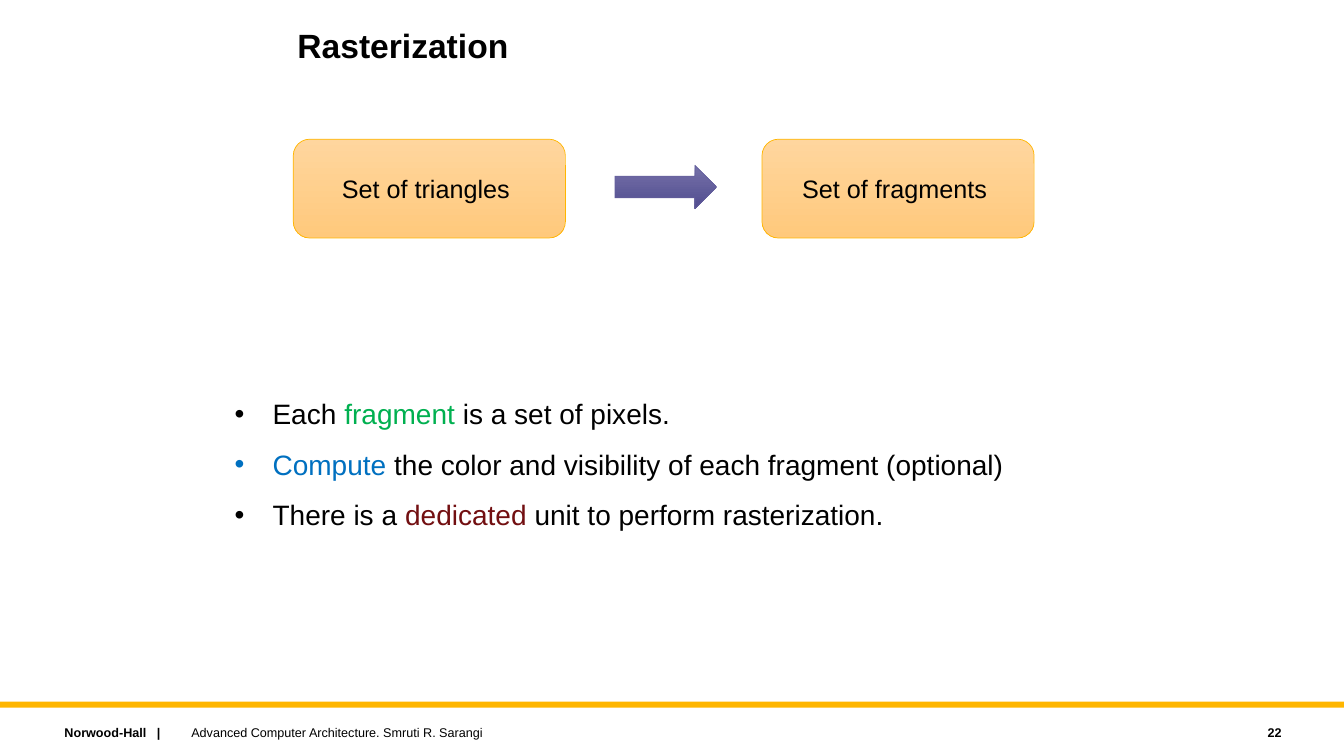
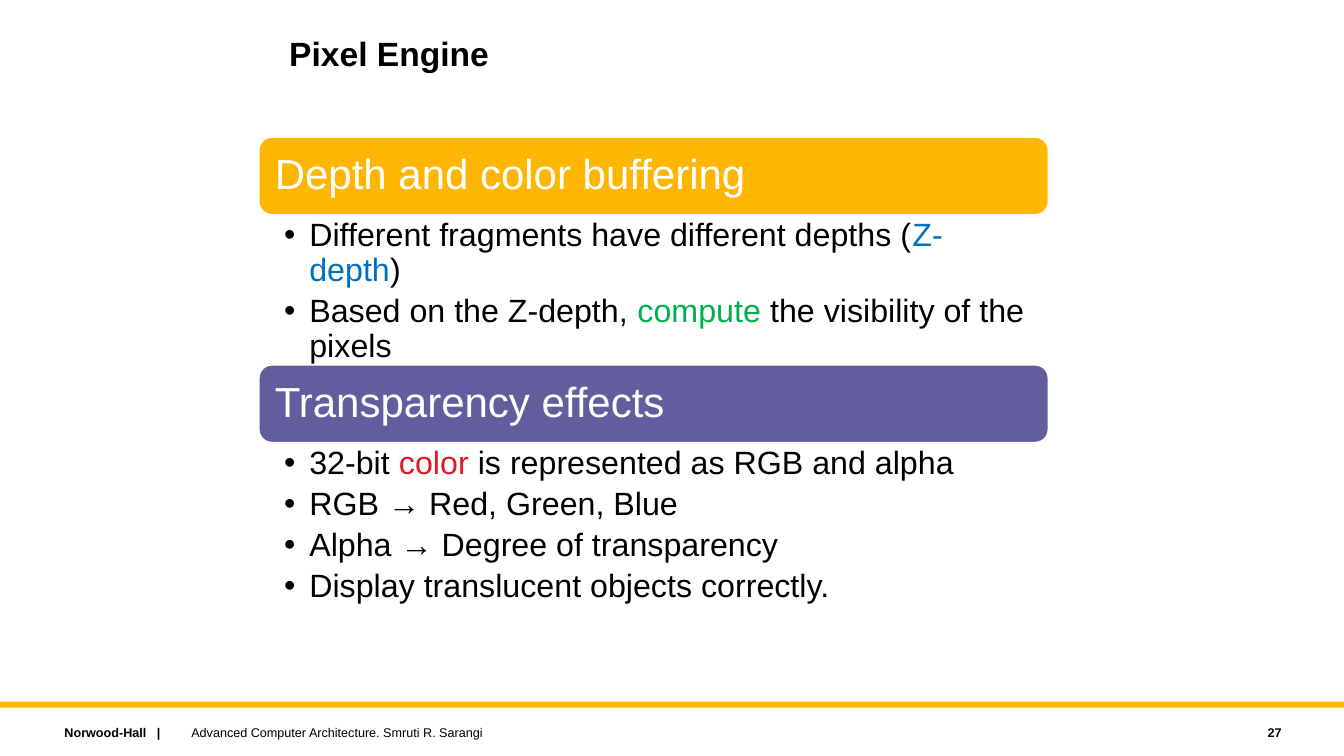
from collections import namedtuple

from lxml.etree import SubElement
from pptx import Presentation
from pptx.dml.color import RGBColor
from pptx.enum.shapes import MSO_SHAPE
from pptx.enum.text import MSO_ANCHOR, MSO_AUTO_SIZE, PP_ALIGN
from pptx.oxml.ns import qn
from pptx.util import Pt

BLACK = RGBColor(0x00, 0x00, 0x00)
WHITE = RGBColor(0xFF, 0xFF, 0xFF)
AMBER = RGBColor(0xFF, 0xB6, 0x00)
VIOLET = RGBColor(0x62, 0x5D, 0x9C)
GREEN = RGBColor(0x00, 0xB0, 0x50)
BLUE = RGBColor(0x00, 0x70, 0xC0)
MAROON = RGBColor(0x72, 0x0F, 0x11)
RED = RGBColor(0xE2, 0x1A, 0x23)
AMBER_SHADES = (RGBColor(0xFF, 0xD6, 0x9E), RGBColor(0xFF, 0xC9, 0x7C))
VIOLET_SHADES = (RGBColor(0x75, 0x71, 0xA8), RGBColor(0x52, 0x4D, 0x90))

FONT = "Arial"
SLIDE_WIDTH, SLIDE_HEIGHT = 960, 540
TITLE_ONLY = 5

# All lengths are in points.
Box = namedtuple("Box", "left top width height")


def in_points(box):
    return [Pt(length) for length in box]


def add_run(paragraph, text, size, color=BLACK, bold=False):
    run = paragraph.add_run()
    run.text = text
    run.font.name = FONT
    run.font.size = Pt(size)
    run.font.bold = bold
    run.font.color.rgb = color


def format_frame(frame, insets=(7.2, 3.6, 7.2, 3.6), anchor=MSO_ANCHOR.TOP):
    """Set wrapping, anchor and the left, top, right and bottom insets."""
    frame.word_wrap = True
    frame.auto_size = MSO_AUTO_SIZE.NONE
    frame.vertical_anchor = anchor
    (frame.margin_left, frame.margin_top,
     frame.margin_right, frame.margin_bottom) = in_points(insets)


def add_label(slide, box, text, size, bold=False, align=PP_ALIGN.LEFT):
    frame = slide.shapes.add_textbox(*in_points(box)).text_frame
    format_frame(frame, anchor=MSO_ANCHOR.MIDDLE)
    paragraph = frame.paragraphs[0]
    paragraph.alignment = align
    add_run(paragraph, text, size, bold=bold)


def add_bullets(slide, box, items, size, indent, insets=(7.2, 3.6, 7.2, 3.6),
                line_spacing=1.0, before=0, after=0):
    """Each item is a list of (text, color) runs."""
    frame = slide.shapes.add_textbox(*in_points(box)).text_frame
    format_frame(frame, insets)
    for index, runs in enumerate(items):
        paragraph = frame.add_paragraph() if index else frame.paragraphs[0]
        properties = paragraph._p.get_or_add_pPr()
        properties.set("marL", str(Pt(indent)))
        properties.set("indent", str(-Pt(indent)))
        SubElement(properties, qn("a:buFont"), typeface=FONT)
        SubElement(properties, qn("a:buChar"), char="•")
        paragraph.line_spacing = line_spacing
        paragraph.space_before = Pt(before if index else 0)
        paragraph.space_after = Pt(after)
        for text, color in runs:
            add_run(paragraph, text, size, color)


def add_block(slide, preset, box, fill, line=None, line_width=0.5):
    """Add a preset shape; fill is one color or a (top, bottom) pair."""
    shape = slide.shapes.add_shape(preset, *in_points(box))
    shape.shadow.inherit = False
    if isinstance(fill, RGBColor):
        shape.fill.solid()
        shape.fill.fore_color.rgb = fill
    else:
        shape.fill.gradient()
        shape.fill.gradient_angle = 270
        for stop, color in zip(shape.fill.gradient_stops, fill):
            stop.color.rgb = color
    if line is None:
        shape.line.fill.background()
    else:
        shape.line.color.rgb = line
        shape.line.width = Pt(line_width)
    return shape


def add_footer(slide, box, number):
    """Place the rule at the top of the box and the labels below it."""
    add_block(slide, MSO_SHAPE.RECTANGLE,
              Box(box.left, box.top, box.width, 4.3), AMBER)
    label_top = box.top + 13
    add_label(slide, Box(box.left + 39, label_top, 163, 18),
              "Norwood-Hall   |", 9, bold=True)
    add_label(slide, Box(box.left + 129.6, label_top, 576, 18),
              "Advanced Computer Architecture. Smruti R. Sarangi", 9)
    add_label(slide, Box(box.left + box.width - 138.5, label_top, 101, 18),
              str(number), 9, bold=True, align=PP_ALIGN.RIGHT)


def add_titled_slide(presentation, title, title_left, title_top, number):
    slide = presentation.slides.add_slide(presentation.slide_layouts[TITLE_ONLY])
    placeholder = slide.shapes.title
    (placeholder.left, placeholder.top, placeholder.width,
     placeholder.height) = in_points(Box(title_left, title_top, 549.4, 64.8))
    format_frame(placeholder.text_frame)
    paragraph = placeholder.text_frame.paragraphs[0]
    paragraph.alignment = PP_ALIGN.LEFT
    paragraph.line_spacing = 0.9
    add_run(paragraph, title, 24, bold=True)
    add_footer(slide, Box(0, 501.2, SLIDE_WIDTH, SLIDE_HEIGHT - 501.2), number)
    return slide


def add_flow(slide, box, source, result):
    """Place two boxes at the ends of the region and an arrow between them."""
    step_width = 194.4
    right_step = box.left + box.width - step_width
    for left, text in ((box.left, source), (right_step, result)):
        step = add_block(slide, MSO_SHAPE.ROUNDED_RECTANGLE,
                         Box(left, box.top, step_width, box.height),
                         AMBER_SHADES, AMBER)
        format_frame(step.text_frame, anchor=MSO_ANCHOR.MIDDLE)
        paragraph = step.text_frame.paragraphs[0]
        paragraph.alignment = PP_ALIGN.CENTER
        add_run(paragraph, text, 18)
    add_block(slide, MSO_SHAPE.RIGHT_ARROW,
              Box(box.left + 229.7, box.top + 18.7, 72.7, 31),
              VIOLET_SHADES, VIOLET)


def add_section(slide, box, heading, fill, items):
    """Place a colored heading with its bullets filling the rest of the box."""
    heading_height = 55.4
    banner = add_block(slide, MSO_SHAPE.ROUNDED_RECTANGLE,
                       box._replace(height=heading_height), fill, WHITE, 1)
    format_frame(banner.text_frame, (8.64,) * 4, MSO_ANCHOR.MIDDLE)
    paragraph = banner.text_frame.paragraphs[0]
    paragraph.alignment = PP_ALIGN.LEFT
    paragraph.line_spacing = 0.9
    add_run(paragraph, heading, 30, WHITE)
    bullets = Box(box.left, box.top + heading_height, box.width,
                  box.height - heading_height)
    add_bullets(slide, bullets, items, 23, 18, (18, 2.9, 16.6, 2.9),
                line_spacing=0.9, after=4.6)


def build_rasterization(presentation):
    slide = add_titled_slide(presentation, "Rasterization", 205.2, 17.3, 22)
    add_bullets(slide, Box(160.6, 280, 638.6, 134.6), [
        [("Each ", BLACK), ("fragment", GREEN), (" is a set of pixels.", BLACK)],
        [("Compute", BLUE),
         (" the color and visibility of each fragment (optional)", BLACK)],
        [("There is a ", BLACK), ("dedicated", MAROON),
         (" unit to perform rasterization.", BLACK)],
    ], 20, 27, before=12)
    add_flow(slide, Box(209.5, 99.4, 529.2, 70.6),
             "Set of triangles ", "Set of fragments ")


def build_pixel_engine(presentation):
    slide = add_titled_slide(presentation, "Pixel Engine", 199.4, 23, 27)
    sections = [
        ("Depth and color buffering", AMBER, 162.7, [
            [("Different fragments have different depths (", BLACK),
             ("Z-depth", BLUE), (")", BLACK)],
            [("Based on the Z-depth, ", BLACK), ("compute", GREEN),
             (" the visibility of the pixels", BLACK)],
        ]),
        ("Transparency effects", VIOLET, 202.3, [
            [("32-bit ", BLACK), ("color", RED),
             (" is represented as RGB and alpha", BLACK)],
            [("RGB → Red, Green, Blue", BLACK)],
            [("Alpha → Degree of transparency", BLACK)],
            [("Display translucent objects correctly.", BLACK)],
        ]),
    ]
    top = 98
    for heading, fill, height, items in sections:
        add_section(slide, Box(185, top, 563.8, height), heading, fill, items)
        top += height


def main():
    presentation = Presentation()
    presentation.slide_width = Pt(SLIDE_WIDTH)
    presentation.slide_height = Pt(SLIDE_HEIGHT)
    build_rasterization(presentation)
    build_pixel_engine(presentation)
    presentation.save("out.pptx")


if __name__ == "__main__":
    main()
